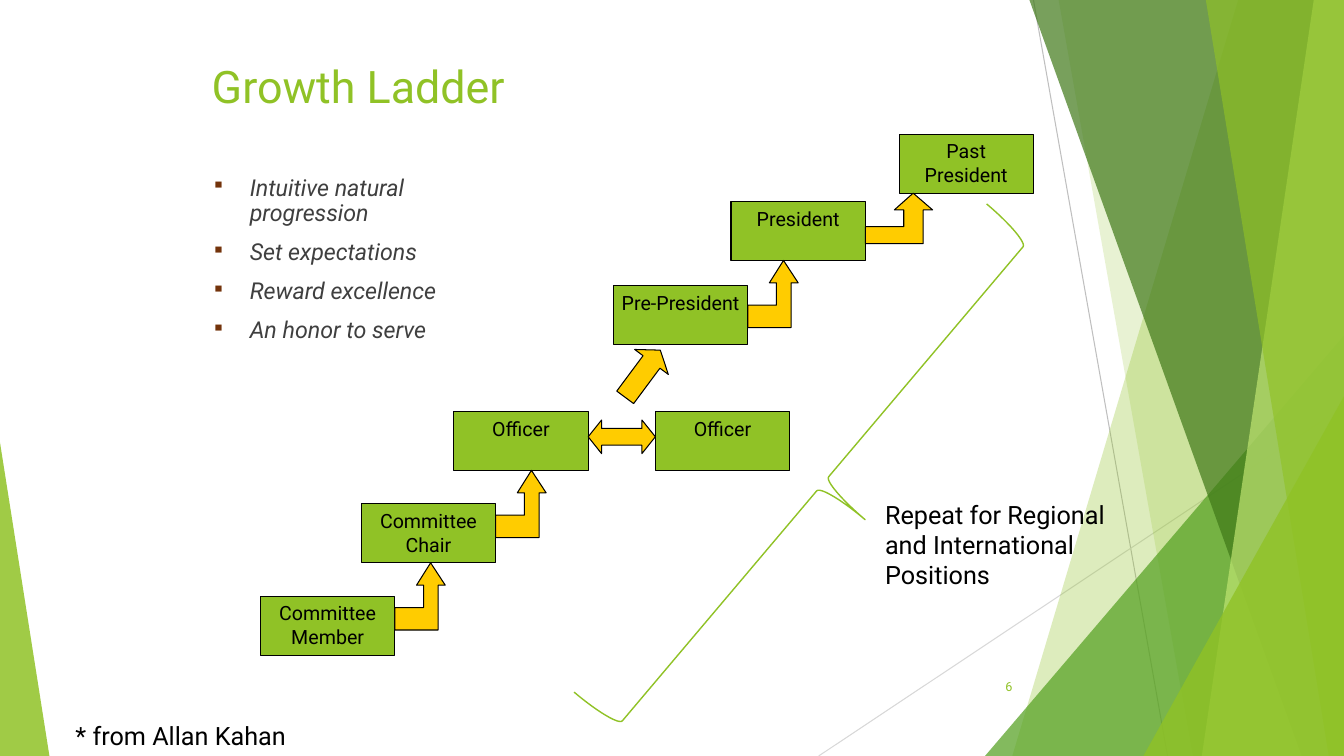
"""Build the Growth Ladder slide: steps climbing from committee member to past president."""
from lxml import etree
from pptx import Presentation
from pptx.dml.color import RGBColor
from pptx.enum.shapes import MSO_CONNECTOR, MSO_SHAPE
from pptx.enum.text import MSO_ANCHOR, MSO_AUTO_SIZE, PP_ALIGN
from pptx.oxml.ns import qn
from pptx.util import Inches, Pt

RECT, TRIANGLE = MSO_SHAPE.RECTANGLE, MSO_SHAPE.ISOSCELES_TRIANGLE
TWO_WAY, ARROW, BRACE = MSO_SHAPE.LEFT_RIGHT_ARROW, MSO_SHAPE.RIGHT_ARROW, MSO_SHAPE.RIGHT_BRACE
STRAIGHT = MSO_CONNECTOR.STRAIGHT
LEFT, CENTER, RIGHT = PP_ALIGN.LEFT, PP_ALIGN.CENTER, PP_ALIGN.RIGHT
TOP, MIDDLE = MSO_ANCHOR.TOP, MSO_ANCHOR.MIDDLE
W, H = 13.33, 7.5
UNIT = Inches(1) // 12
GREEN, GOLD, BLACK = "90C226", "FFCC00", "000000"


def paint(sp, fill=None, line=None, width=0.75, alpha=100):
    """Set the fill, its opacity in percent, and the outline."""
    sp.shadow.inherit = False
    if fill:
        sp.fill.solid()
        sp.fill.fore_color.rgb = RGBColor.from_string(fill)
        if alpha < 100:
            color = sp.fill._xPr.find(qn("a:solidFill"))[0]
            etree.SubElement(color, qn("a:alpha"), val=str(alpha * 1000))
    else:
        sp.fill.background()
    if line:
        sp.line.color.rgb = RGBColor.from_string(line)
        sp.line.width = Pt(width)
    else:
        sp.line.fill.background()


def write(tf, lines, size, color=BLACK, align=LEFT, anchor=TOP, italic=None):
    """Fill a text frame with one paragraph a line."""
    frame = {"word_wrap": True, "auto_size": MSO_AUTO_SIZE.NONE, "vertical_anchor": anchor}
    for name, value in frame.items():
        setattr(tf, name, value)
    for i, line in enumerate(lines):
        p = tf.add_paragraph() if i else tf.paragraphs[0]
        p.alignment = align
        r = p.add_run()
        r.text = line
        for name, value in {"name": "Roboto", "size": Pt(size), "italic": italic}.items():
            setattr(r.font, name, value)
        r.font.color.rgb = RGBColor.from_string(color)


prs = Presentation()
prs.slide_width, prs.slide_height = Inches(W), Inches(H)
s = prs.slides.add_slide(prs.slide_layouts[5])
shapes = s.shapes

for x1, y1, x2, color in [(10.25, 0, 11.58, "BFBFBF"), (W, 4.03, 8.12, "D8D8D8")]:
    ln = shapes.add_connector(STRAIGHT, Inches(x1), Inches(y1), Inches(x2), Inches(H))
    ln.line.color.rgb = RGBColor.from_string(color)
    ln.line.width = Pt(0.75)
    etree.SubElement(ln._element.spPr, qn("a:effectLst"))

backdrop = [
    ("panel", 12.28, 10.04, GREEN, 30),
    ("panel", 10.5, 11.83, GREEN, 20),
    ("wedge", 9.77, 3.33, "54A021", 72),
    ("panel", 10.21, 12.91, "3F7818", 70),
    ("panel", 13.03, 11.92, "BFE471", 70),
    ("panel", 11.96, 13.18, GREEN, 65),
    ("wedge", 11.34, 3.93, GREEN, 80),
    ("left wedge", 0.49, 4.39, GREEN, 85),
]
for kind, a, b, color, alpha in backdrop:
    if kind == "panel":
        fb = shapes.build_freeform(Inches(a), 0)
        fb.add_line_segments([(Inches(x), Inches(y)) for x, y in [(W, 0), (W, H), (b, H)]])
        sp = fb.convert_to_shape()
    else:
        left, right = (0, a) if kind == "left wedge" else (a, W)
        sp = shapes.add_shape(TRIANGLE, Inches(left), Inches(b), Inches(right - left), Inches(H - b))
        sp.adjustments[0] = 0 if kind == "left wedge" else 1
    paint(sp, color, alpha=alpha)

title = shapes.title
title.left, title.top, title.width, title.height = map(Inches, (2, 0.53, 9.5, 0.92))
write(title.text_frame, ["Growth Ladder"], 32, GREEN)

points = ["Intuitive natural progression", "Set expectations", "Reward excellence", "An honor to serve"]
tf = shapes.add_textbox(*map(Inches, (2, 1.7, 2.83, 1.8))).text_frame
write(tf, points, 16.6, "3F3F3F", italic=True)
for i, p in enumerate(tf.paragraphs):
    p.line_spacing = 0.9
    p.space_before = Pt(10 if i else 0)
    pPr = p._p.get_or_add_pPr()
    pPr.set("marL", str(Inches(0.38)))
    pPr.set("indent", str(-Inches(0.38)))
    etree.SubElement(etree.SubElement(pPr, qn("a:buClr")), qn("a:srgbClr"), val="73330B")
    etree.SubElement(pPr, qn("a:buSzPct"), val="80000")
    etree.SubElement(pPr, qn("a:buChar"), char="▪")

steps = [
    (31, 71, ["Committee Member"]),
    (43, 60, ["Committee Chair"]),
    (78, 49, ["Officer"]),
    (54, 49, ["Officer"]),
    (73, 34, ["Pre-President"]),
    (87, 24, ["President"]),
    (107, 16, ["Past", "President"]),
]
for col, row, lines in steps:
    sp = shapes.add_shape(RECT, col * UNIT, row * UNIT, 16 * UNIT, 7 * UNIT)
    paint(sp, GREEN, BLACK)
    sp.text_frame.margin_left = sp.text_frame.margin_right = Inches(0.01)
    write(sp.text_frame, lines, 14, align=CENTER)

bend = [(0.71, 0), (0.43, 1 / 3), (0.57, 1 / 3), (0.57, 2 / 3), (0, 2 / 3),
        (0, 1), (0.86, 1), (0.86, 1 / 3), (1, 1 / 3)]
for col, row, cols, rows in [(47, 67, 6, 8), (59, 56, 6, 8), (89, 31, 6, 8), (103, 23, 8, 6)]:
    corners = [(round((col + x * cols) * UNIT), round((row + y * rows) * UNIT)) for x, y in bend]
    fb = shapes.build_freeform(*corners[0])
    fb.add_line_segments(corners[1:])
    paint(fb.convert_to_shape(), GOLD, BLACK)

for kind, col, row, cols, rows, turn, head in [
    (TWO_WAY, 70, 50, 8, 4, 0, 0.4),
    (ARROW, 73, 42, 7, 5, 306.6, 0.35),
]:
    sp = shapes.add_shape(kind, col * UNIT, row * UNIT, cols * UNIT, rows * UNIT)
    sp.adjustments[0], sp.adjustments[1] = 0.5, head
    sp.rotation = turn
    paint(sp, GOLD, BLACK)

brace = shapes.add_shape(BRACE, *map(Inches, (7.61, 1.63, 1.1, 6.34)))
brace.adjustments[0], brace.adjustments[1] = 0.083, 0.5
brace.rotation = 40.2
paint(brace, line=GREEN, width=1)

for box, line, fmt in [
    ((0.65, 7.1, 2.65, 0.4), "* from Allan Kahan", {"size": 18}),
    ((8.68, 4.9, 2.44, 1.01), "Repeat for Regional and International Positions", {"size": 18}),
    ((9.39, 6.61, 0.75, 0.4), "6", {"size": 9, "color": GREEN, "align": RIGHT, "anchor": MIDDLE}),
]:
    write(shapes.add_textbox(*map(Inches, box)).text_frame, [line], **fmt)

prs.save("out.pptx")
